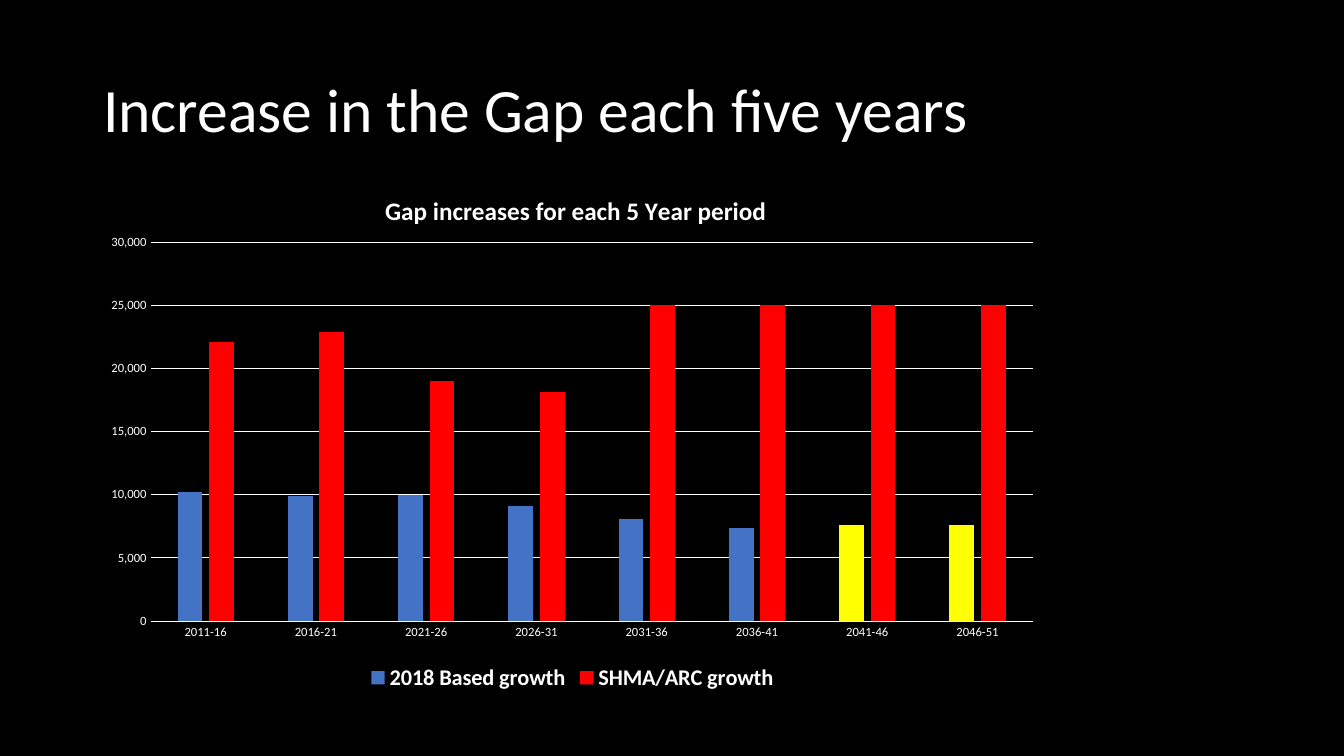
"""Build a slide with a clustered column chart of growth per five-year period."""
from lxml.etree import SubElement
from pptx import Presentation
from pptx.chart.data import CategoryChartData
from pptx.dml.color import RGBColor
from pptx.enum.chart import XL_CHART_TYPE as ChartType, XL_LEGEND_POSITION as LegendPosition
from pptx.enum.chart import XL_TICK_MARK as TickMark
from pptx.enum.text import MSO_ANCHOR as Anchor
from pptx.oxml.ns import qn
from pptx.util import Emu, Pt

COLOURS = {"black": "000000", "white": "FFFFFF", "blue": "4472C4", "red": "FF0000", "yellow": "FFFF00"}
PX = 914400 / 100.8
PERIODS = ["2011-16", "2016-21", "2021-26", "2026-31", "2031-36", "2036-41", "2041-46", "2046-51"]
GROWTH = {
    "2018 Based growth": ("blue", [10200, 9900, 10000, 9100, 8100, 7400, 7600, 7600]),
    "SHMA/ARC growth": ("red", [22100, 22900, 19000, 18100, 25000, 25000, 25000, 25000]),
}
EXTRAPOLATED = [6, 7]


def style_font(font, size, bold=False):
    font.name, font.size, font.bold = "Calibri", Pt(size), bold
    font.color.rgb = RGBColor.from_string(COLOURS["white"])


def set_layout(parent, index, **values):
    for old in parent.findall(qn("c:layout")):
        parent.remove(old)
    layout = SubElement(parent, qn("c:layout"))
    parent.insert(index, layout)
    manual = SubElement(layout, qn("c:manualLayout"))
    for tag, value in values.items():
        SubElement(manual, qn(f"c:{tag}")).set("val", str(value))


deck = Presentation()
deck.slide_width, deck.slide_height = Emu(round(1344 * PX)), Emu(round(756 * PX))
page = deck.slides.add_slide(deck.slide_layouts[5])
page.background.fill.solid()
page.background.fill.fore_color.rgb = RGBColor.from_string(COLOURS["black"])

title = page.shapes.title
title.left, title.top, title.width, title.height = (Emu(round(n * PX)) for n in (93, 40, 1159, 146))
title.text_frame.text = "Increase in the Gap each five years"
title.text_frame.vertical_anchor = Anchor.MIDDLE
para = title.text_frame.paragraphs[0]
para.alignment = 1
para.line_spacing = 0.9
style_font(para.font, 44)

data = CategoryChartData(number_format="#,##0")
data.categories = PERIODS
for name, (colour, values) in GROWTH.items():
    data.add_series(name, values)
frame = [Emu(round(n * PX)) for n in (93, 162, 959, 534)]
chart = page.shapes.add_chart(ChartType.COLUMN_CLUSTERED, *frame, data).chart
style_font(chart.font, 10)

heading = chart.chart_title
heading.text_frame.text = "Gap increases for each 5 Year period"
style_font(heading.text_frame.paragraphs[0].font, 18, bold=True)
heading.include_in_layout = False

chart.has_legend = True
chart.legend.position = LegendPosition.BOTTOM
chart.legend.include_in_layout = False
style_font(chart.legend.font, 16, bold=True)

periods, amounts = chart.category_axis, chart.value_axis
for axis in (periods, amounts):
    axis.major_tick_mark = axis.minor_tick_mark = TickMark.NONE
    style_font(axis.tick_labels.font, 9)
amounts.minimum_scale, amounts.maximum_scale, amounts.major_unit = 0, 30000, 5000
amounts.tick_labels.number_format = "#,##0"
amounts.tick_labels.number_format_is_linked = False
amounts.has_major_gridlines = True
amounts.format.line.fill.background()
for line in (periods.format.line, amounts.major_gridlines.format.line):
    line.width = Pt(0.75)
    line.color.rgb = RGBColor.from_string(COLOURS["white"])

plot = chart.plots[0]
plot.gap_width, plot.overlap, plot.vary_by_categories = 219, -27, False
for series, (colour, values) in zip(plot.series, GROWTH.values()):
    series.invert_if_negative = False
    series.format.fill.solid()
    series.format.fill.fore_color.rgb = RGBColor.from_string(COLOURS[colour])
for index in EXTRAPOLATED:
    fill = plot.series[0].points[index].format.fill
    fill.solid()
    fill.fore_color.rgb = RGBColor.from_string(COLOURS["yellow"])

chart_xml = chart.element.find(qn("c:chart"))
set_layout(chart_xml.find(qn("c:title")), 1, xMode="edge", yMode="edge", x=0.3, y=0.05)
set_layout(chart_xml.find(qn("c:plotArea")), 0, layoutTarget="inner", xMode="edge", yMode="edge",
           x=0.06, y=0.15, w=0.92, h=0.71)

deck.save("out.pptx")
